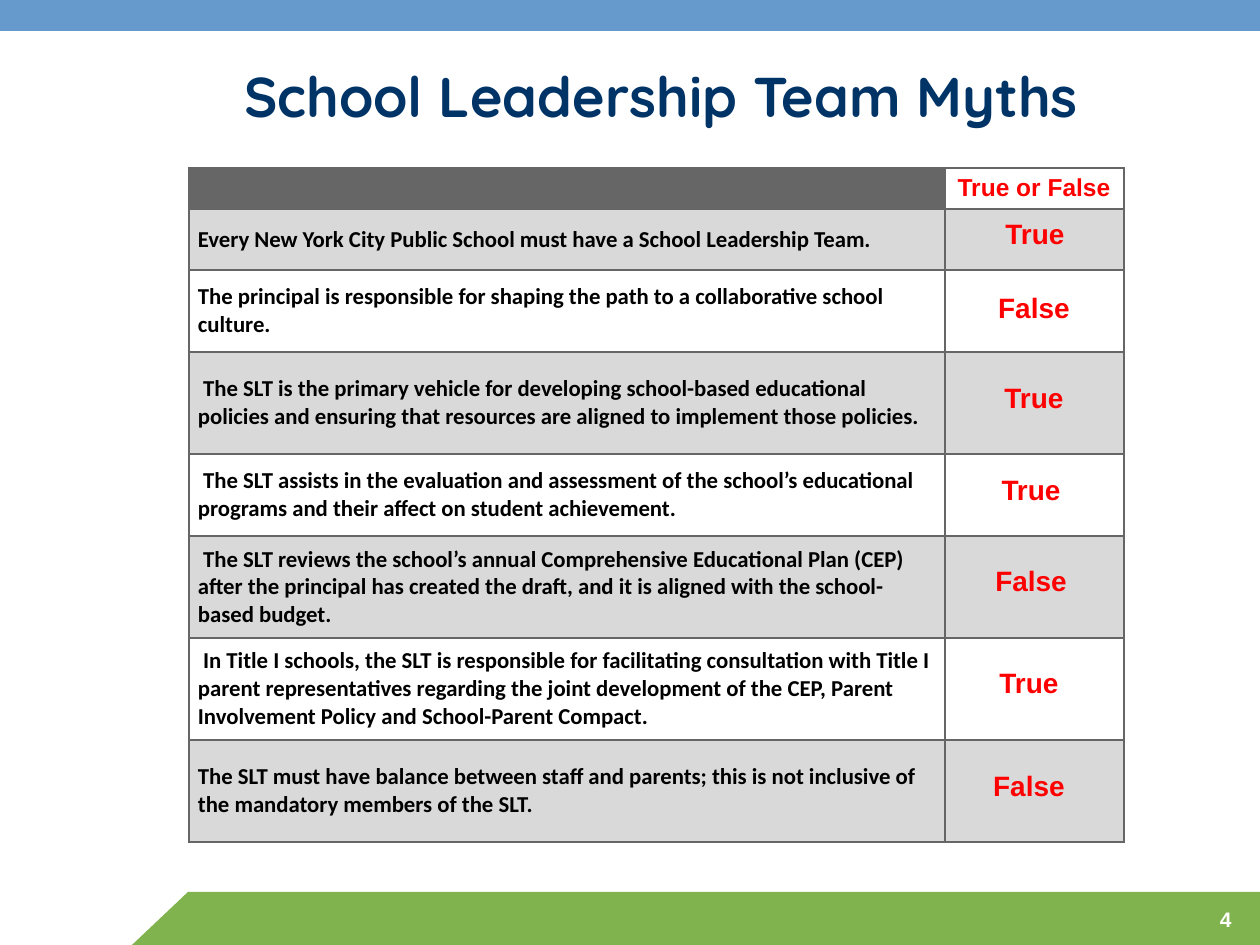
import dataclasses

import pptx
import pptx.dml.color
import pptx.enum.shapes
import pptx.enum.text
import pptx.oxml
import pptx.oxml.ns
import pptx.util

PX = 914400 / 126
ALIGN = pptx.enum.text.PP_ALIGN
ANCHOR = pptx.enum.text.MSO_ANCHOR
SHAPE = pptx.enum.shapes.MSO_SHAPE


@dataclasses.dataclass(frozen=True)
class Theme:
    sky: str = "6699CC"
    green: str = "80B34D"
    navy: str = "003366"
    red: str = "FF0000"
    black: str = "000000"
    white: str = "FFFFFF"
    grid: str = "666666"
    band: str = "D9D9D9"
    title_font: str = "Quicksand"
    label_font: str = "Arial"
    body_font: str = "Calibri"
    title_size: int = 32
    answer_size: int = 16
    header_size: int = 14
    body_size: int = 13
    number_size: int = 12


def px(value):
    return pptx.util.Emu(round(value * PX))


def rgb(value):
    return pptx.dml.color.RGBColor.from_string(value)


def line_xml(tag, color):
    return pptx.oxml.parse_xml(
        f'<a:{tag} {pptx.oxml.ns.nsdecls("a")} w="12700"><a:solidFill>'
        f'<a:srgbClr val="{color}"/></a:solidFill></a:{tag}>'
    )


class SlideBuilder:
    def __init__(self, page, theme):
        self.page = page
        self.theme = theme

    def fill_text(self, frame, text, font, size, color, align=ALIGN.LEFT):
        frame.text = text
        frame.word_wrap = True
        para = frame.paragraphs[0]
        para.alignment = align
        span = para.runs[0]
        span.font.name = font
        span.font.size = pptx.util.Pt(size)
        span.font.bold = True
        span.font.color.rgb = rgb(color)
        return para

    def block(self, kind, left, top, width, height, color, flip=False):
        shape = self.page.shapes.add_shape(kind, px(left), px(top), px(width), px(height))
        shape.shadow.inherit = False
        shape.fill.solid()
        shape.fill.fore_color.rgb = rgb(color)
        shape.line.fill.background()
        if flip:
            shape._element.spPr.xfrm.set("flipH", "1")

    def title(self, text, left, top, width, height, indent):
        box = self.page.shapes.title
        box.left, box.top, box.width, box.height = px(left), px(top), px(width), px(height)
        theme = self.theme
        para = self.fill_text(box.text_frame, text, theme.title_font, theme.title_size,
                              theme.navy, ALIGN.CENTER)
        box.text_frame.vertical_anchor = ANCHOR.MIDDLE
        box.text_frame.auto_size = pptx.enum.text.MSO_AUTO_SIZE.SHAPE_TO_FIT_TEXT
        para._p.get_or_add_pPr().set("marL", str(px(indent)))
        para.runs[0]._r.get_or_add_rPr().insert(0, line_xml("ln", theme.navy))

    def label(self, text, left, top, width, height, size, color, align):
        box = self.page.shapes.add_textbox(px(left), px(top), px(width), px(height))
        self.fill_text(box.text_frame, text, self.theme.label_font, size, color, align)

    def cell(self, cell, fill):
        properties = cell._tc.get_or_add_tcPr()
        for side in ("lnL", "lnR", "lnT", "lnB"):
            properties.append(line_xml(side, self.theme.grid))
        if fill:
            cell.fill.solid()
            cell.fill.fore_color.rgb = rgb(fill)
        else:
            cell.fill.background()
        cell.margin_top = cell.margin_bottom = 0

    def table(self, header, statements, left, top, widths, heights):
        theme = self.theme
        table = self.page.shapes.add_table(
            len(heights), len(widths), px(left), px(top), px(sum(widths)), px(sum(heights))
        ).table
        table.first_row = table.horz_banding = False
        for column, width in zip(table.columns, widths):
            column.width = px(width)
        for index, height in enumerate(heights):
            table.rows[index].height = px(height)
            band = theme.band if index % 2 else None
            self.cell(table.cell(index, 0), band if index else theme.grid)
            self.cell(table.cell(index, 1), band)
        heading = table.cell(0, 1)
        heading.margin_top = px(6)
        self.fill_text(heading.text_frame, header, theme.label_font, theme.header_size,
                       theme.red)
        for index, statement in enumerate(statements, 1):
            cell = table.cell(index, 0)
            cell.margin_left = cell.margin_right = px(9)
            cell.vertical_anchor = ANCHOR.MIDDLE
            self.fill_text(cell.text_frame, statement, theme.body_font, theme.body_size,
                           theme.black)


MYTHS = [
    ("Every New York City Public School must have a School Leadership Team.",
     "True", 61, 959, 210),
    ("The principal is responsible for shaping the path to a collaborative school culture.",
     "False", 82, 958, 284),
    (" The SLT is the primary vehicle for developing school-based educational policies "
     "and ensuring that resources are aligned to implement those policies.",
     "True", 102, 958, 374),
    (" The SLT assists in the evaluation and assessment of the school’s educational "
     "programs and their affect on student achievement.",
     "True", 82, 955, 466),
    (" The SLT reviews the school’s annual Comprehensive Educational Plan (CEP) after the "
     "principal has created the draft, and it is aligned with the school-based budget.",
     "False", 102, 955, 557),
    (" In Title I schools, the SLT is responsible for facilitating consultation with "
     "Title I parent representatives regarding the joint development of the CEP, "
     "Parent Involvement Policy and School-Parent Compact.",
     "True", 102, 953, 659),
    ("The SLT must have balance between staff and parents; this is not inclusive of the "
     "mandatory members of the SLT.",
     "False", 102, 953, 762),
]


def main():
    deck = pptx.Presentation()
    deck.slide_width, deck.slide_height = px(1260), px(945)
    theme = Theme()
    builder = SlideBuilder(deck.slides.add_slide(deck.slide_layouts[5]), theme)
    builder.block(SHAPE.RECTANGLE, 188, 892, 1072, 53, theme.green)
    builder.block(SHAPE.RIGHT_TRIANGLE, 132, 892, 56, 53, theme.green, flip=True)
    builder.block(SHAPE.RECTANGLE, 0, 0, 1260, 31, theme.sky)
    builder.title("School Leadership Team Myths", 0, 55, 1260, 81, 63)
    builder.label("4", 1108, 900, 136, 32, theme.number_size, theme.white, ALIGN.RIGHT)
    builder.table("True or False", [myth[0] for myth in MYTHS], 189, 168, [756, 179],
                  [41] + [myth[2] for myth in MYTHS])
    for _, answer, _, left, top in MYTHS:
        builder.label(answer, left, top, 152, 47, theme.answer_size, theme.red, ALIGN.CENTER)
    deck.save("out.pptx")


if __name__ == "__main__":
    main()
